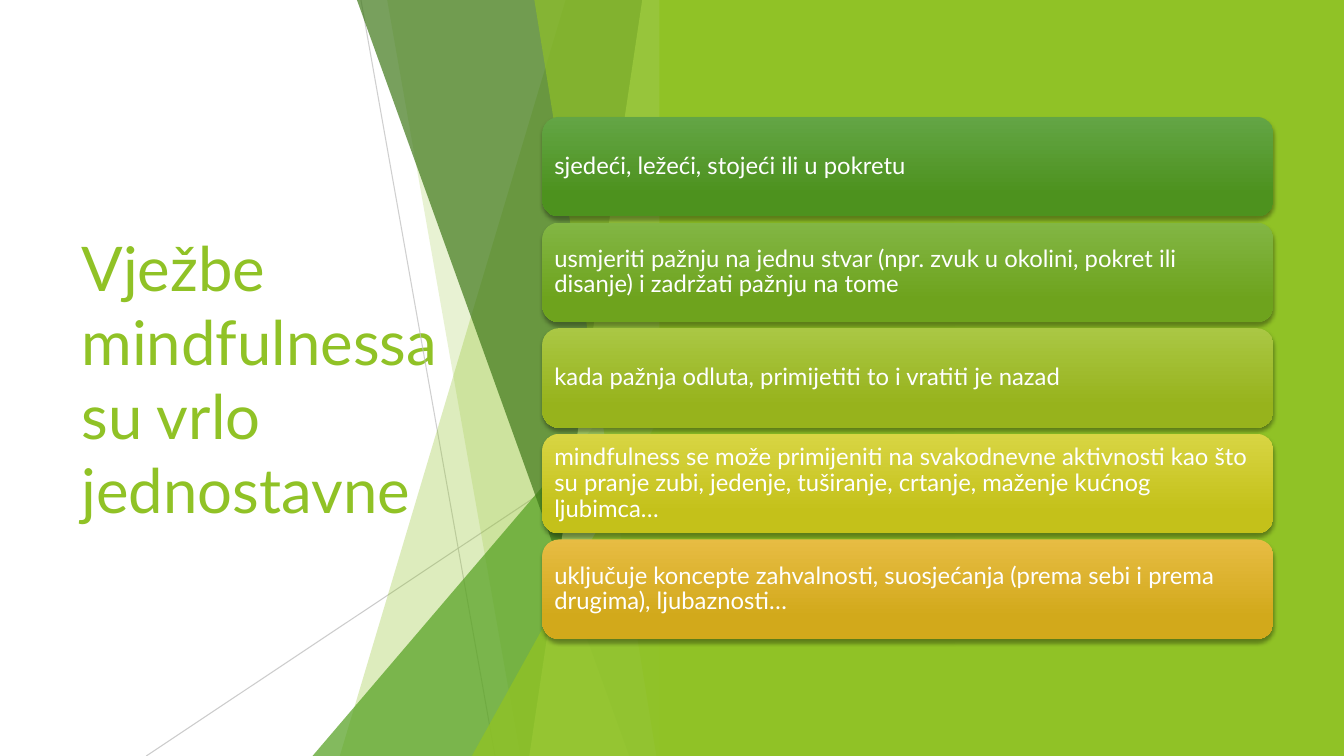
from lxml import etree
from pptx import Presentation
from pptx.dml.color import RGBColor
from pptx.enum.shapes import MSO_CONNECTOR as Line, MSO_SHAPE as Kind
from pptx.enum.text import MSO_ANCHOR as Anchor, PP_ALIGN as Align
from pptx.oxml.ns import qn
from pptx.util import Inches, Pt

WIDE, HIGH = 13.33, 7.5
LIME = "90C226"
CARDS = [
    ("sjedeći, ležeći, stojeći ili u pokretu", "63A545", "4D921E"),
    ("usmjeriti pažnju na jednu stvar (npr. zvuk u okolini, pokret ili "
     "disanje) i zadržati pažnju na tome", "82B644", "6EA31D"),
    ("kada pažnja odluta, primijetiti to i vratiti je nazad", "AAC744", "97B31C"),
    ("mindfulness se može primijeniti na svakodnevne aktivnosti kao što su "
     "pranje zubi, jedenje, tuširanje, crtanje, maženje kućnog ljubimca…",
     "D8D543", "C4C11A"),
    ("uključuje koncepte zahvalnosti, suosjećanja (prema sebi i prema "
     "drugima), ljubaznosti…", "E7BC43", "D2A91B"),
]
# Kind, then offsets from the left of the fan: top and foot of a shard's
# left edge, or left and peak of a triangle; then colour and opacity.
FAN = [
    ("shard", 2.51, 0.27, LIME, 30),
    ("shard", 0.74, 2.06, LIME, 20),
    ("peak", 0, 3.33, "54A021", 72),
    ("shard", 0.44, 3.14, "3F7819", 70),
    ("shard", 3.27, 2.15, "C0E474", 70),
    ("shard", 2.2, 3.41, LIME, 65),
    ("peak", 1.58, 3.93, LIME, 80),
]
RAYS = [(0.48, 0, 1.81, 75), (3.56, 4.03, -1.65, 80)]


def color(code):
    return RGBColor.from_string(code)


def fade(fill, part):
    """Set the opacity of a solid fill, in percent."""
    tint = fill._xPr.find(qn("a:solidFill"))[0]
    etree.SubElement(tint, qn("a:alpha"), val=str(part * 1000))


def paint(shape, code, part=100):
    shape.shadow.inherit = False
    shape.line.fill.background()
    shape.fill.solid()
    shape.fill.fore_color.rgb = color(code)
    if part < 100:
        fade(shape.fill, part)


def shade(shape):
    """Drop a soft shadow straight down."""
    shape.shadow.inherit = False
    effect = shape._element.spPr.find(qn("a:effectLst"))
    drop = etree.SubElement(effect, qn("a:outerShdw"), blurRad=str(Pt(3)),
                            dist=str(Pt(2)), dir="5400000", rotWithShape="0")
    tint = etree.SubElement(drop, qn("a:srgbClr"), val="000000")
    etree.SubElement(tint, qn("a:alpha"), val="35000")


def write(shape, text, size, ink, pad=(0.1, 0.05), lead=None):
    frame = shape.text_frame
    frame.word_wrap = True
    frame.vertical_anchor = Anchor.MIDDLE
    frame.margin_left = frame.margin_right = Inches(pad[0])
    frame.margin_top = frame.margin_bottom = Inches(pad[1])
    para = frame.paragraphs[0]
    para.alignment = Align.LEFT
    if lead:
        para.line_spacing = lead
    run = para.add_run()
    run.text = text
    run.font.size = Pt(size)
    run.font.name = "Lato"
    run.font.color.rgb = color(ink)


def draw_title(shapes, left, top, width, height):
    box = shapes.add_textbox(*map(Inches, (left, top, width, height)))
    write(box, "Vježbe mindfulnessa su vrlo jednostavne", 44, LIME)


def draw_ray(shapes, start, end, part):
    ray = shapes.add_connector(Line.STRAIGHT, *map(Inches, start + end))
    ray.line.width = Pt(0.75)
    ray.line.color.rgb = color("BFBFBF")
    fade(ray.line.fill, part)
    etree.SubElement(ray._element.spPr, qn("a:effectLst"))


def draw_fan(shapes, left, top, width, height):
    """Thin rays, then overlapping shards that share their right edge."""
    right, base = left + width, top + height
    for head, drop, foot, part in RAYS:
        draw_ray(shapes, (left + head, top + drop), (left + foot, base), part)
    for kind, first, second, code, part in FAN:
        if kind == "shard":
            pen = shapes.build_freeform(Inches(left + first), Inches(top))
            corners = [(right, top), (right, base), (left + second, base)]
            pen.add_line_segments([tuple(map(Inches, spot)) for spot in corners])
            shape = pen.convert_to_shape()
        else:
            spot = left + first, top + second, width - first, height - second
            shape = shapes.add_shape(Kind.ISOSCELES_TRIANGLE, *map(Inches, spot))
            shape.adjustments[0] = 1
        paint(shape, code, part)


def draw_panel(shapes, left, top, width, height):
    panel = shapes.add_shape(Kind.RECTANGLE, *map(Inches, (left, top, width, height)))
    paint(panel, LIME)


def draw_cards(shapes, left, top, width, height, gap=0.06):
    step = (height + gap) / len(CARDS)
    for row, (text, light, dark) in enumerate(CARDS):
        spot = left, top + row * step, width, step - gap
        card = shapes.add_shape(Kind.ROUNDED_RECTANGLE, *map(Inches, spot))
        card.line.fill.background()
        card.fill.gradient()
        card.fill.gradient_angle = 270
        for stop, code, place in zip(card.fill.gradient_stops, (light, dark), (0, 0.78)):
            stop.color.rgb = color(code)
            stop.position = place
        shade(card)
        write(card, text, 17, "FFFFFF", pad=(0.07, 0.07), lead=0.9)


def main():
    deck = Presentation()
    deck.slide_width, deck.slide_height = Inches(WIDE), Inches(HIGH)
    shapes = deck.slides.add_slide(deck.slide_layouts[6]).shapes
    draw_title(shapes, 0.71, 1.51, 3.88, 4.48)
    draw_fan(shapes, 3.1, 0, 3.56, HIGH)
    draw_panel(shapes, 6.54, 0, WIDE - 6.54, HIGH)
    draw_cards(shapes, 5.38, 1.16, 7.25, 5.18)
    deck.save("out.pptx")


if __name__ == "__main__":
    main()
